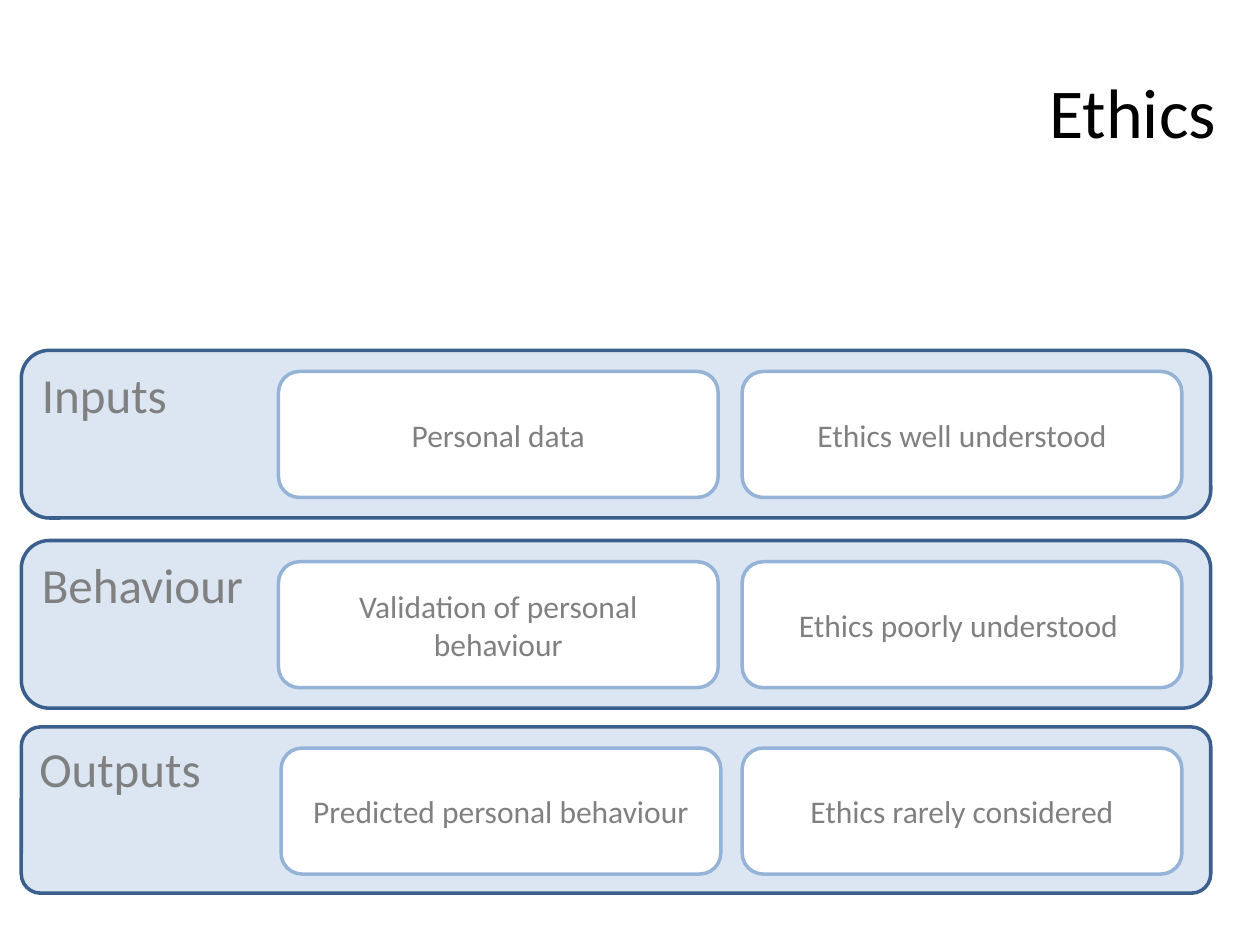
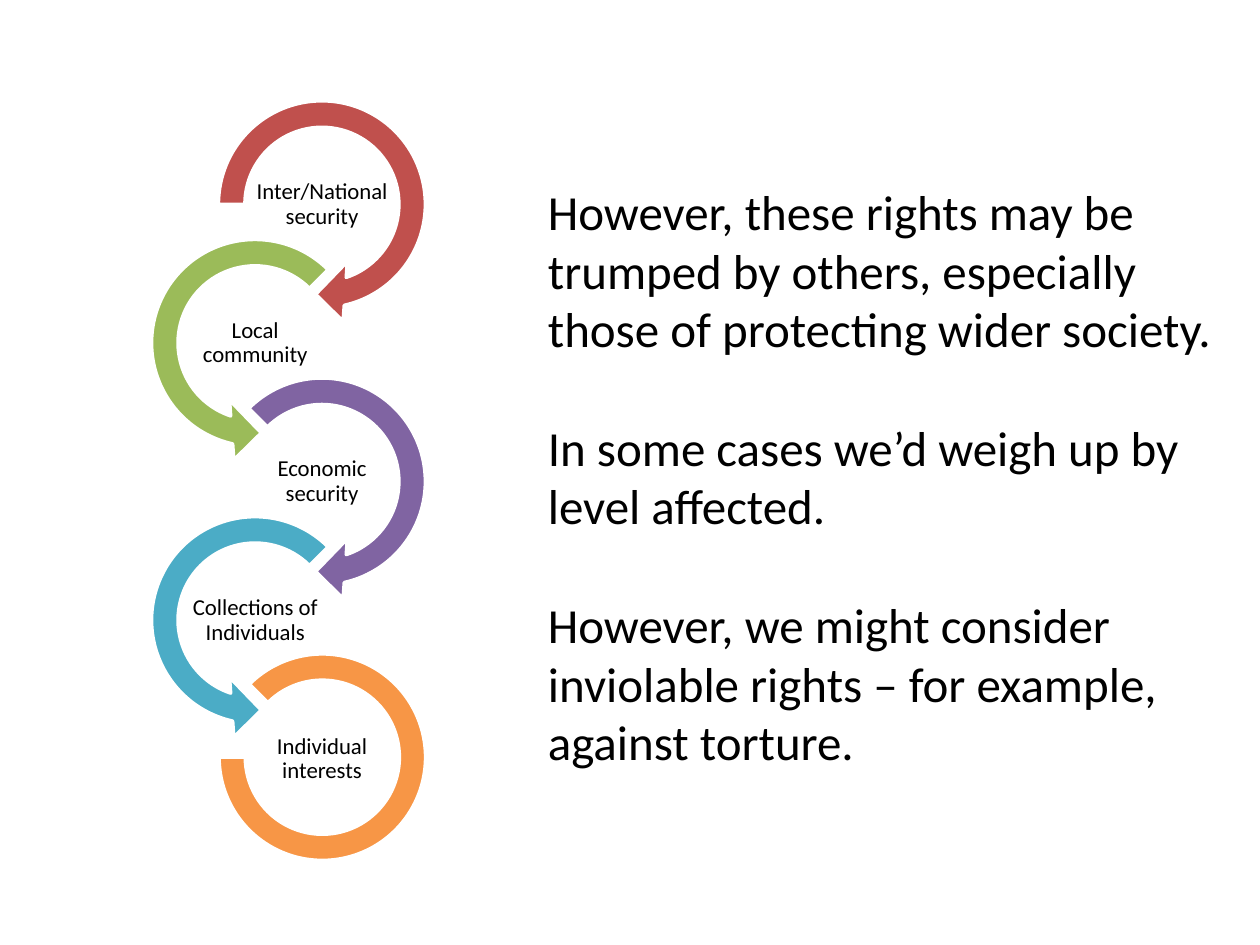
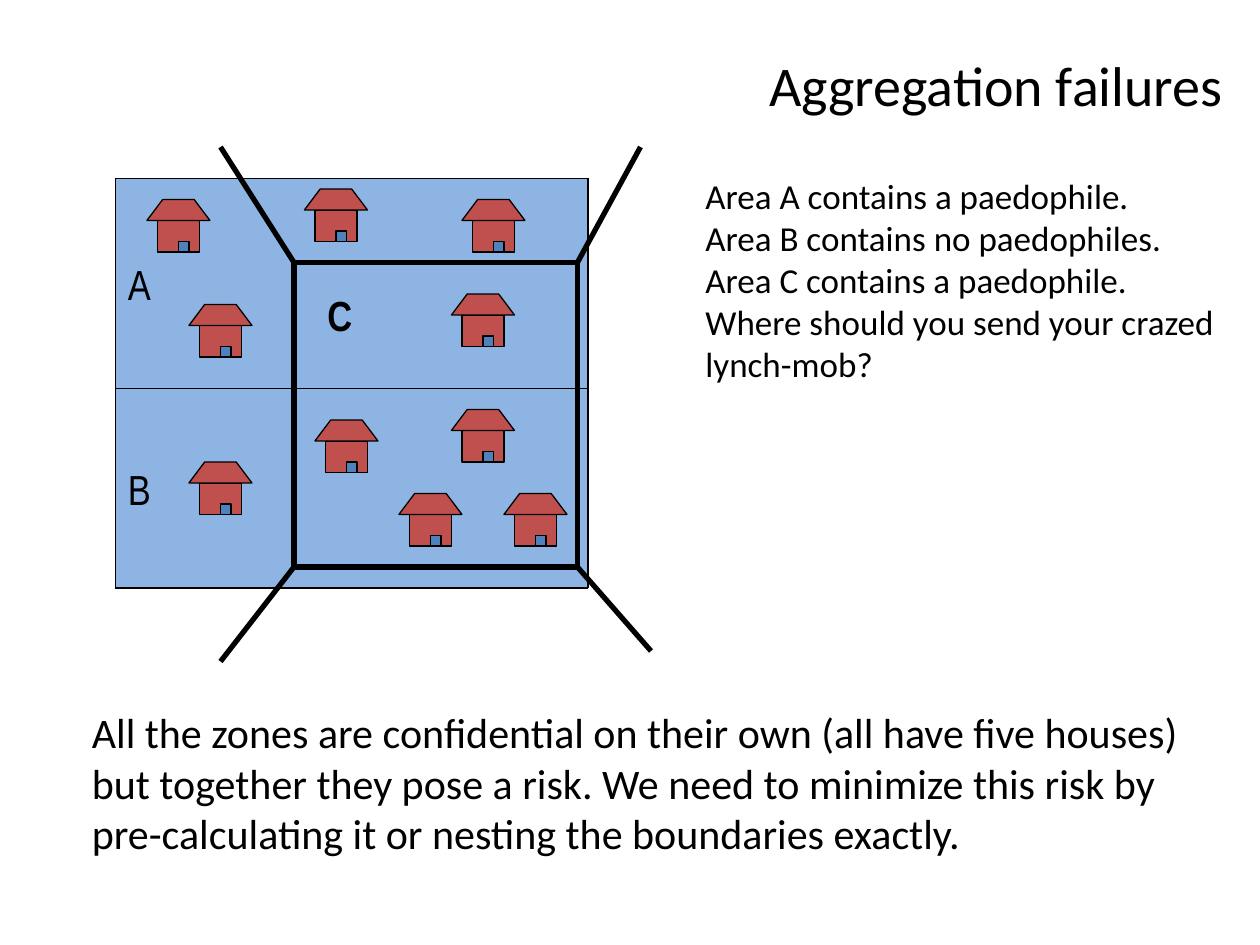
from itertools import pairwise

from pptx import Presentation
from pptx.dml.color import RGBColor
from pptx.enum.dml import MSO_LINE
from pptx.enum.shapes import MSO_CONNECTOR, MSO_SHAPE
from pptx.enum.text import MSO_ANCHOR as ANCHOR, PP_ALIGN as ALIGN
from pptx.oxml.ns import qn
from pptx.util import Pt
from lxml import etree

BLACK = RGBColor(0x00, 0x00, 0x00)
WHITE = RGBColor(0xFF, 0xFF, 0xFF)
GREY = RGBColor(0x80, 0x80, 0x80)
PANEL_FILL = RGBColor(0xDC, 0xE6, 0xF2)
PANEL_LINE = RGBColor(0x3A, 0x5F, 0x8C)
CARD_LINE = RGBColor(0x95, 0xB3, 0xD7)
RED = RGBColor(0xC0, 0x50, 0x4D)
GREEN = RGBColor(0x9B, 0xBB, 0x59)
PURPLE = RGBColor(0x80, 0x64, 0xA2)
TEAL = RGBColor(0x4B, 0xAC, 0xC6)
ORANGE = RGBColor(0xF7, 0x96, 0x46)
ZONE_BLUE = RGBColor(0x8E, 0xB4, 0xE3)
DOOR_BLUE = RGBColor(0x4F, 0x81, 0xBD)

TITLE = {"align": ALIGN.RIGHT, "anchor": ANCHOR.MIDDLE}
CARD_TEXT = {"size": 18, "color": GREY, "align": ALIGN.CENTER, "anchor": ANCHOR.MIDDLE}
RING_TEXT = {"size": 13, "align": ALIGN.CENTER, "anchor": ANCHOR.MIDDLE, "inset": 0.7, "spacing": 0.9}
AREA_TEXT = {"size": 24, "font": "Arial Narrow", "wrap": False}

PANEL_LEFT, PANEL_WIDTH = 12.2, 679.7
CARD_LEFT, CARD_WIDTH, CARD_HEIGHT = 159.1, 251.3, 72
# top, height, corner, heading, first card's shift, card texts
PANELS = [
    (200.2, 95.8, 0.167, "Inputs", 0, ["Personal data", "Ethics well understood"]),
    (308.9, 95.8, 0.167, "Behaviour", 0, ["Validation of personal behaviour", "Ethics poorly understood "]),
    (415.4, 95, 0.116, "Outputs", 1.5, ["Predicted personal behaviour", "Ethics rarely considered"]),
]

RING_STEP = 79.2
RING_LEFTS = (115.2, 77)
RING_FORMS = [
    (MSO_SHAPE.CIRCULAR_ARROW, 45, 108),
    (MSO_SHAPE.LEFT_CIRCULAR_ARROW, 63, 189),
    (MSO_SHAPE.CIRCULAR_ARROW, 45, 135),
    (MSO_SHAPE.LEFT_CIRCULAR_ARROW, 63, 189),
]
RINGS = [
    ("Inter/National security", RED),
    ("Local community", GREEN),
    ("Economic security", PURPLE),
    ("Collections of Individuals", TEAL),
    ("Individual interests", ORANGE),
]
RIGHTS = [
    "However, these rights may be trumped by others, especially those of protecting wider society.",
    "In some cases we’d weigh up by level affected.",
    "However, we might consider inviolable rights – for example, against torture.",
]

AREAS = [
    "Area A contains a paedophile.",
    "Area B contains no paedophiles.",
    "Area C contains a paedophile.",
    "Where should you send your crazed lynch-mob?",
]
RISK = (
    "All the zones are confidential on their own (all have five houses) but together they pose a risk. "
    "We need to minimize this risk by pre-calculating it or nesting the boundaries exactly."
)
MAP_LEFT, MAP_RIGHT = 66, 336
MAP_TOP, MAP_MIDDLE, MAP_BOTTOM = 102, 222, 336
C_LEFT, C_TOP, C_RIGHT, C_BOTTOM = 168, 150, 330, 324
RAYS = [
    ((C_LEFT, C_TOP), (126, 84)),
    ((C_RIGHT, C_TOP), (366, 84)),
    ((C_RIGHT, C_BOTTOM), (372, 372)),
    ((C_LEFT, C_BOTTOM), (126, 378)),
]
HOUSES = [
    (84, 114), (108, 174), (174, 108), (264, 114), (258, 168),
    (108, 264), (288, 282), (180, 240), (258, 234), (228, 282),
]


def put_text(sp, texts, size=24, color=BLACK, font="Calibri", bold=False, align=ALIGN.LEFT,
             anchor=ANCHOR.TOP, wrap=True, inset=None, spacing=None, after=0):
    tf = sp.text_frame
    frame = {"word_wrap": wrap, "vertical_anchor": anchor}
    if inset is not None:
        frame |= {f"margin_{side}": Pt(inset) for side in ("left", "top", "right", "bottom")}
    for name, value in frame.items():
        setattr(tf, name, value)
    for i, text in enumerate(texts):
        p = tf.add_paragraph() if i else tf.paragraphs[0]
        for name, value in {"alignment": align, "line_spacing": spacing, "space_after": Pt(after)}.items():
            setattr(p, name, value)
        r = p.add_run()
        r.text = text
        for name, value in {"name": font, "size": Pt(size), "bold": bold}.items():
            setattr(r.font, name, value)
        r.font.color.rgb = color


def add_text(s, box, *texts, **style):
    sp = s.shapes.add_textbox(*map(Pt, box))
    put_text(sp, texts, **style)


def paint(sp, fill=None, line=None, width=0.75):
    """Set fill and outline, where None means none, and drop the shadow."""
    sp.shadow.inherit = False
    if fill is None:
        sp.fill.background()
    else:
        sp.fill.solid()
        sp.fill.fore_color.rgb = fill
    if line is None:
        sp.line.fill.background()
    else:
        sp.line.color.rgb = line
        sp.line.width = Pt(width)


def add_form(s, form, box, adjust=(), **colours):
    sp = s.shapes.add_shape(form, *map(Pt, box))
    for i, value in enumerate(adjust):
        sp.adjustments[i] = value
    paint(sp, **colours)
    return sp


def add_line(s, start, end, width=0.75, dash=None):
    line = s.shapes.add_connector(MSO_CONNECTOR.STRAIGHT, *map(Pt, (*start, *end)))
    line.line.color.rgb = BLACK
    line.line.width = Pt(width)
    if dash:
        line.line.dash_style = dash
    etree.SubElement(line._element.spPr, qn("a:effectLst"))


def add_panel(s, top, height, corner, heading, shift, cards):
    sp = add_form(s, MSO_SHAPE.ROUNDED_RECTANGLE, (PANEL_LEFT, top, PANEL_WIDTH, height), [corner],
                  fill=PANEL_FILL, line=PANEL_LINE, width=2)
    put_text(sp, [heading], size=28, color=GREY)
    for left, text in zip((CARD_LEFT + shift, CARD_LEFT + 265), cards):
        card = add_form(s, MSO_SHAPE.ROUNDED_RECTANGLE, (left, top + 12.1, CARD_WIDTH, CARD_HEIGHT),
                        fill=WHITE, line=CARD_LINE, width=2)
        put_text(card, [text], **CARD_TEXT)


def add_ring(s, i, text, color):
    """Draw the i-th ring of the chain; the last one is an arc without a head."""
    left, top = RING_LEFTS[i % 2], 48 + i * RING_STEP
    if i < len(RING_FORMS):
        form, end, start = RING_FORMS[i]
        box, adjust = (left, top, 137.5, 137.5), (0.11, 11.423, end, start, 0.125)
    else:
        form, box, adjust = MSO_SHAPE.BLOCK_ARC, (left + 10, top + 8.9, 118, 118), (135, 108, 0.127)
    add_form(s, form, box, adjust, fill=color, line=WHITE, width=2)
    add_text(s, (left + 30.2, top + 49.9, 77.2, 38), text, **RING_TEXT)


def add_house(s, x, y):
    grp = s.shapes.add_group_shape()
    add_form(grp, MSO_SHAPE.RECTANGLE, (x + 6, y + 12, 24, 18), fill=RED, line=BLACK)
    roof = grp.shapes.build_freeform(Pt(x), Pt(y + 12), scale=1.0)
    roof.add_line_segments([(Pt(x + dx), Pt(y + dy)) for dx, dy in ((9, 0), (27, 0), (36, 12))], close=True)
    paint(roof.convert_to_shape(), fill=RED, line=BLACK)
    add_form(grp, MSO_SHAPE.RECTANGLE, (x + 18, y + 24, 6, 6), fill=DOOR_BLUE, line=BLACK)


def add_zone(s, name, top, bottom):
    sp = add_form(s, MSO_SHAPE.RECTANGLE, (MAP_LEFT, top, MAP_RIGHT - MAP_LEFT, bottom - top), fill=ZONE_BLUE)
    put_text(sp, [name], anchor=ANCHOR.MIDDLE, **AREA_TEXT)


def add_borders(s):
    for far in (MAP_TOP, MAP_BOTTOM):
        corners = [(MAP_LEFT, MAP_MIDDLE), (MAP_LEFT, far), (MAP_RIGHT, far), (MAP_RIGHT, MAP_MIDDLE)]
        for start, end in pairwise(corners):
            add_line(s, start, end)
    for left, right in pairwise((MAP_LEFT, C_LEFT, C_RIGHT, MAP_RIGHT)):
        hidden = {"width": 0.25, "dash": MSO_LINE.ROUND_DOT} if left == C_LEFT else {}
        add_line(s, (left, MAP_MIDDLE), (right, MAP_MIDDLE), **hidden)


def ethics_slide(s):
    add_text(s, (54, 18, 648, 90), "Ethics", size=40, **TITLE)
    for panel in PANELS:
        add_panel(s, *panel)


def rights_slide(s):
    for i, ring in enumerate(RINGS):
        add_ring(s, i, *ring)
    add_text(s, (306, 100, 394, 424), *RIGHTS, size=28, after=34)


def aggregation_slide(s):
    add_text(s, (30, 18, 676, 60), "Aggregation failures", size=32, **TITLE)
    add_text(s, (396, 96, 306, 330), *AREAS, size=20)
    add_zone(s, "A", MAP_TOP, MAP_MIDDLE)
    add_zone(s, "B", MAP_MIDDLE, MAP_BOTTOM)
    for start, end in RAYS:
        add_line(s, start, end, width=3)
    add_text(s, (180, 162, 29, 36), "C", bold=True, **AREA_TEXT)
    for x, y in HOUSES:
        add_house(s, x, y)
    add_text(s, (45.4, 400.3, 655, 94), RISK)
    add_form(s, MSO_SHAPE.RECTANGLE, (C_LEFT, C_TOP, C_RIGHT - C_LEFT, C_BOTTOM - C_TOP), line=BLACK, width=3)
    add_borders(s)


def main():
    prs = Presentation()
    prs.slide_width, prs.slide_height = Pt(720), Pt(540)
    for build in (ethics_slide, rights_slide, aggregation_slide):
        build(prs.slides.add_slide(prs.slide_layouts[6]))
    prs.save("out.pptx")


if __name__ == "__main__":
    main()
